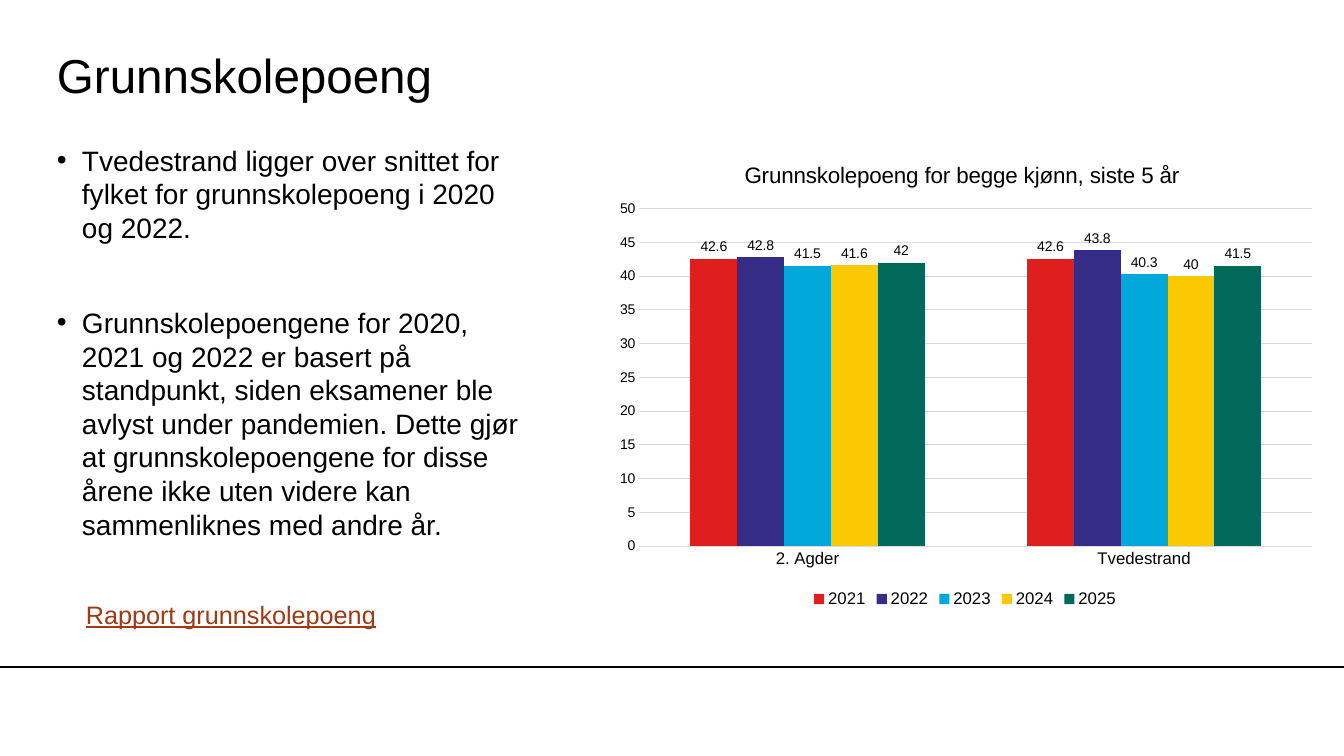
import pptx
import pptx.chart.data
import pptx.dml.color
import pptx.enum.chart
import pptx.enum.shapes
import pptx.enum.text
import pptx.util
from lxml import etree
from pptx.oxml.ns import qn

PX_PER_INCH = 100.8
FONT = "Arial"
BLACK, GRID, LINK = "000000", "D9D9D9", "9F3A14"
POINTS = [
    "Tvedestrand ligger over snittet for fylket for grunnskolepoeng i 2020 og 2022.",
    "Grunnskolepoengene for 2020, 2021 og 2022 er basert på standpunkt, siden eksamener "
    "ble avlyst under pandemien. Dette gjør at grunnskolepoengene for disse årene ikke "
    "uten videre kan sammenliknes med andre år.",
]
REGIONS = ["2. Agder", "Tvedestrand"]
SCORES = [
    ("2021", (42.6, 42.6), "DF1F1D"),
    ("2022", (42.8, 43.8), "342C86"),
    ("2023", (41.5, 40.3), "00A9DA"),
    ("2024", (41.6, 40), "FAC800"),
    ("2025", (42, 41.5), "00695A"),
]


def px(length):
    return pptx.util.Emu(round(length * 914400 / PX_PER_INCH))


def color(value):
    return pptx.dml.color.RGBColor.from_string(value)


def style(font, size, value=BLACK):
    font.name = FONT
    font.size = pptx.util.Pt(size)
    font.bold = False
    font.color.rgb = color(value)


def stroke(line, value):
    line.color.rgb = color(value)
    line.width = pptx.util.Pt(0.75)


def place(shape, box):
    shape.left, shape.top, shape.width, shape.height = map(px, box)


def prepare_frame(shape, anchor):
    """Return the text frame, wrapped, without margins or autofit."""
    frame = shape.text_frame
    frame.word_wrap = True
    frame.auto_size = pptx.enum.text.MSO_AUTO_SIZE.NONE
    frame.vertical_anchor = anchor
    frame.margin_left = frame.margin_right = frame.margin_top = frame.margin_bottom = 0
    return frame


def add_run(paragraph, words, size, value=BLACK):
    paragraph.alignment = pptx.enum.text.PP_ALIGN.LEFT
    run = paragraph.add_run()
    run.text = words
    style(run.font, size, value)
    return run


def fill_title(heading, box):
    place(heading, box)
    frame = prepare_frame(heading, pptx.enum.text.MSO_ANCHOR.MIDDLE)
    add_run(frame.paragraphs[0], "Grunnskolepoeng", 34)


def fill_points(body, box):
    place(body, box)
    frame = prepare_frame(body, pptx.enum.text.MSO_ANCHOR.TOP)
    for index, point in enumerate(POINTS):
        paragraph = frame.add_paragraph() if index else frame.paragraphs[0]
        properties = paragraph._p.get_or_add_pPr()
        properties.set("marL", str(px(25)))
        properties.set("indent", str(px(-25)))
        etree.SubElement(properties, qn("a:buChar")).set("char", "•")
        paragraph.line_spacing = pptx.util.Pt(24)
        paragraph.space_before = pptx.util.Pt(44 if index else 0)
        add_run(paragraph, point, 20)


def add_report_link(slide, box):
    report = slide.shapes.add_textbox(*map(px, box))
    report.text_frame.word_wrap = True
    run = add_run(report.text_frame.paragraphs[0], "Rapport grunnskolepoeng", 18, LINK)
    run.font.underline = True


def set_layout(parent, **fractions):
    """Fix a chart part's place as fractions of the chart area."""
    layout = parent.find(qn("c:layout"))
    if layout is None:
        layout = etree.Element(qn("c:layout"))
        text = parent.find(qn("c:tx"))
        parent.insert(0 if text is None else 1, layout)
    manual = etree.SubElement(layout, qn("c:manualLayout"))
    if "w" in fractions:
        etree.SubElement(manual, qn("c:layoutTarget")).set("val", "inner")
    for mode in ("xMode", "yMode"):
        etree.SubElement(manual, qn("c:" + mode)).set("val", "edge")
    for key, fraction in fractions.items():
        etree.SubElement(manual, qn("c:" + key)).set("val", str(fraction))


def format_axes(chart):
    for axis, size in ((chart.category_axis, 12), (chart.value_axis, 10)):
        axis.major_tick_mark = pptx.enum.chart.XL_TICK_MARK.NONE
        style(axis.tick_labels.font, size)
    stroke(chart.category_axis.format.line, GRID)
    scores = chart.value_axis
    scores.minimum_scale, scores.maximum_scale, scores.major_unit = 0, 50, 5
    scores.format.line.fill.background()
    stroke(scores.major_gridlines.format.line, GRID)


def add_score_chart(slide, box):
    data = pptx.chart.data.CategoryChartData()
    data.categories = REGIONS
    for year, values, _ in SCORES:
        data.add_series(year, values)
    kind = pptx.enum.chart.XL_CHART_TYPE.COLUMN_CLUSTERED
    chart = slide.shapes.add_chart(kind, *map(px, box), data).chart
    style(chart.font, 10)

    chart.has_title = True
    add_run(chart.chart_title.text_frame.paragraphs[0],
            "Grunnskolepoeng for begge kjønn, siste 5 år", 16)
    chart.chart_title.include_in_layout = False
    set_layout(chart.chart_title._element, x=0.19, y=0.03)

    chart.has_legend = True
    chart.legend.position = pptx.enum.chart.XL_LEGEND_POSITION.BOTTOM
    chart.legend.include_in_layout = False
    style(chart.legend.font, 12)
    format_axes(chart)

    plot = chart.plots[0]
    plot.gap_width, plot.overlap, plot.vary_by_categories = 219, 0, False
    for series, (_, _, fill) in zip(plot.series, SCORES):
        series.format.fill.solid()
        series.format.fill.fore_color.rgb = color(fill)
        labels = series.data_labels
        labels.show_value = True
        labels.position = pptx.enum.chart.XL_LABEL_POSITION.OUTSIDE_END
        style(labels.font, 10)
    plot_area = chart._chartSpace.chart.plotArea
    set_layout(plot_area, x=0.05, y=0.14, w=0.93, h=0.72)


def add_footer_rule(slide, y, width):
    rule = slide.shapes.add_connector(
        pptx.enum.shapes.MSO_CONNECTOR.STRAIGHT, 0, px(y), px(width), px(y))
    stroke(rule.line, BLACK)
    etree.SubElement(rule._element.spPr, qn("a:effectLst"))


def main():
    presentation = pptx.Presentation()
    presentation.slide_width, presentation.slide_height = px(1344), px(756)
    slide = presentation.slides.add_slide(presentation.slide_layouts[1])
    add_footer_rule(slide, 667, 1344)
    fill_title(slide.shapes.title, (57, 36, 1119, 76))
    fill_points(slide.placeholders[1], (57, 143, 476, 449))
    add_report_link(slide, (76, 594, 333, 40))
    add_score_chart(slide, (603, 143, 724, 469))
    presentation.save("out.pptx")


if __name__ == "__main__":
    main()
